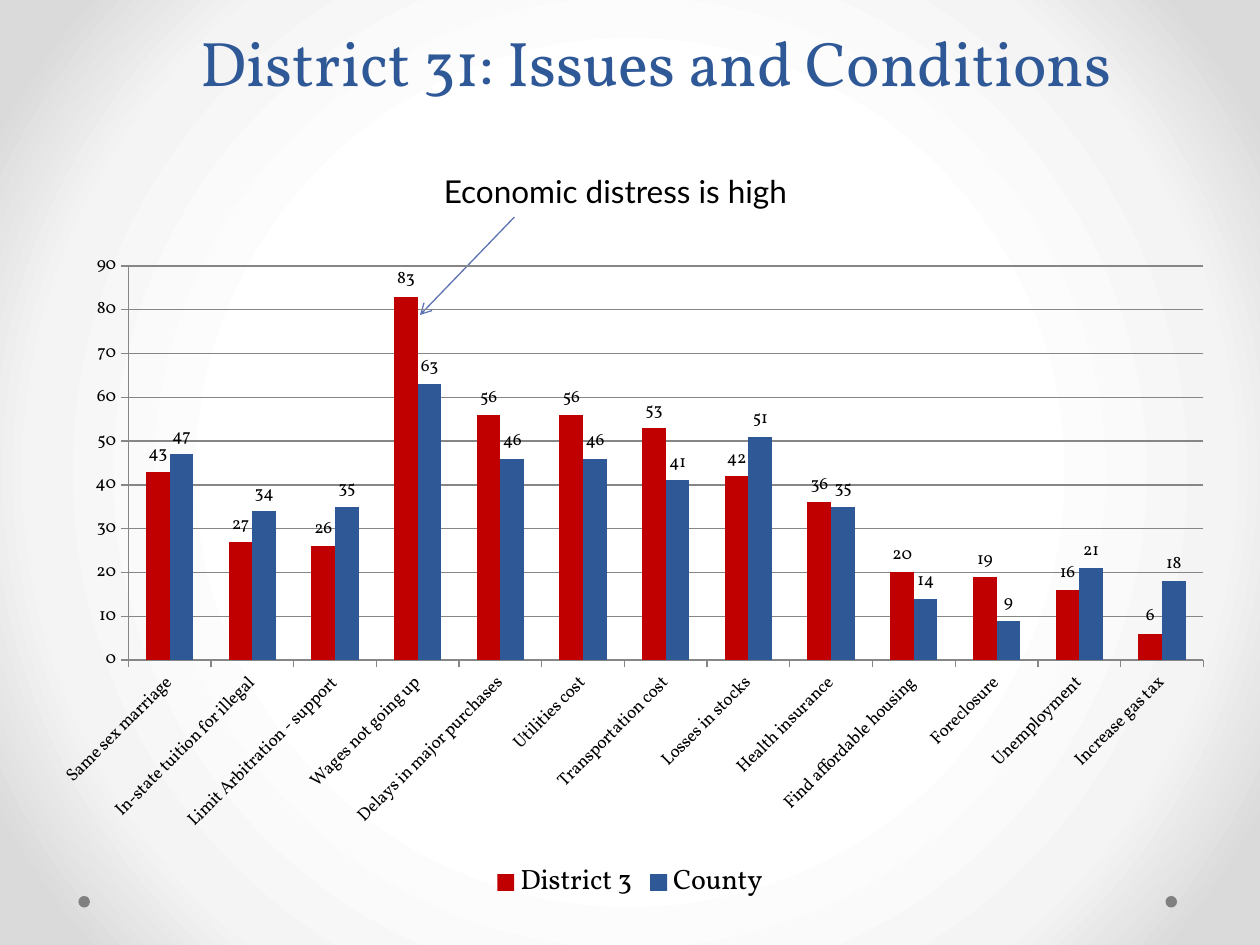
from lxml import etree
from pptx import Presentation
from pptx.chart.data import CategoryChartData as Data
from pptx.dml.color import RGBColor as Rgb
from pptx.enum.chart import XL_CHART_TYPE as Kind, XL_LABEL_POSITION as Spot
from pptx.enum.chart import XL_LEGEND_POSITION as Side, XL_TICK_MARK as Tick
from pptx.enum.shapes import MSO_CONNECTOR as Link, MSO_SHAPE as Form
from pptx.enum.text import MSO_ANCHOR as Anchor, PP_ALIGN as Align
from pptx.oxml import parse_xml
from pptx.oxml.ns import nsdecls, qn
from pptx.util import Pt

HUES = {"blue": "2F5897", "red": "C00000", "arrow": "5C72B2", "text": "000000",
        "grid": "868686", "dot": "808080"}
GLOW = [(50, "FFFFFF"), (76, "F4F4F4"), (92, "DADADA")]
ISSUES = [
    ("Same sex marriage", 43, 47),
    ("In-state tuition for illegal", 27, 34),
    ("Limit Arbitration - support", 26, 35),
    ("Wages not going up", 83, 63),
    ("Delays in major purchases", 56, 46),
    ("Utilities cost", 56, 46),
    ("Transportation cost", 53, 41),
    ("Losses in stocks", 42, 51),
    ("Health insurance", 36, 35),
    ("Find affordable housing", 20, 14),
    ("Foreclosure", 19, 9),
    ("Unemployment", 16, 21),
    ("Increase gas tax", 6, 18),
]


def hue(name):
    return Rgb.from_string(HUES[name])


def style(font, face, size, color):
    font.name, font.size = face, Pt(size)
    font.color.rgb = hue(color)


def add_glow(slide):
    stops = "".join(f'<a:gs pos="{pos * 1000}"><a:srgbClr val="{tint}"/></a:gs>'
                    for pos, tint in GLOW)
    back = parse_xml(
        f'<p:bg {nsdecls("p", "a")}><p:bgPr><a:gradFill><a:gsLst>{stops}</a:gsLst>'
        '<a:path path="circle"><a:fillToRect l="50000" t="50000" r="50000" b="50000"/>'
        '</a:path></a:gradFill><a:effectLst/></p:bgPr></p:bg>')
    slide.element.find(qn("p:cSld")).insert(0, back)


def add_dots(slide, lefts, top, size):
    for left in lefts:
        dot = slide.shapes.add_shape(Form.OVAL, Pt(left), Pt(top), Pt(size), Pt(size))
        dot.shadow.inherit = False
        dot.fill.solid()
        dot.fill.fore_color.rgb = hue("dot")
        dot.line.fill.background()


def add_text(slide, box, text, face, size, color):
    frame = slide.shapes.add_textbox(*map(Pt, box)).text_frame
    frame.word_wrap = True
    frame.text = text
    style(frame.paragraphs[0].runs[0].font, face, size, color)
    return frame


def add_title(slide, box):
    frame = add_text(slide, box, "District 31: Issues and Conditions", "Vollkorn", 36, "blue")
    frame.vertical_anchor = Anchor.BOTTOM
    para = frame.paragraphs[0]
    para.alignment, para.line_spacing = Align.CENTER, Pt(58)


def add_callout(slide, box):
    left, top, width, height = box
    add_text(slide, box, "Economic distress is high", "Lato", 18, "text")
    # Arrow from the note down to the tallest bar
    start, base = left + 47.5, top + height
    arrow = slide.shapes.add_connector(
        Link.STRAIGHT, Pt(start), Pt(base), Pt(start - 54), Pt(base + 56))
    arrow.line.color.rgb, arrow.line.width = hue("arrow"), Pt(0.75)
    etree.SubElement(arrow.line._get_or_add_ln(), qn("a:tailEnd"), type="arrow")
    etree.SubElement(arrow.element.spPr, qn("a:effectLst"))


def set_plot(chart, **parts):
    area = chart.plots[0]._element.getparent()
    for old in area.findall(qn("c:layout")):
        area.remove(old)
    sizes = "".join(f'<c:{key} val="{val}"/>' for key, val in parts.items())
    area.insert(0, parse_xml(
        f'<c:layout {nsdecls("c")}><c:manualLayout><c:layoutTarget val="inner"/>'
        f'<c:xMode val="edge"/><c:yMode val="edge"/>{sizes}'
        '</c:manualLayout></c:layout>'))


def add_bars(slide, box):
    names, *groups = zip(*ISSUES)
    data = Data()
    data.categories = names
    for name, vals in zip(("District 3", "County"), groups):
        data.add_series(name, vals)
    chart = slide.shapes.add_chart(Kind.COLUMN_CLUSTERED, *map(Pt, box), data).chart
    chart.has_title = False
    style(chart.font, "Vollkorn", 10, "text")
    set_plot(chart, x=0.08, y=0.04, w=0.9, h=0.59)

    # Bars and their values
    plot = chart.plots[0]
    plot.gap_width, plot.overlap, plot.vary_by_categories = 150, 0, False
    for group, color in zip(plot.series, ("red", "blue")):
        group.format.fill.solid()
        group.format.fill.fore_color.rgb = hue(color)
        group.data_labels.show_value = True
        group.data_labels.position = Spot.OUTSIDE_END

    # Axes
    cats, scale = chart.category_axis, chart.value_axis
    scale.minimum_scale, scale.maximum_scale, scale.major_unit = 0, 90, 10
    scale.has_major_gridlines = True
    for axis in (cats, scale):
        axis.major_tick_mark, axis.minor_tick_mark = Tick.OUTSIDE, Tick.NONE
        style(axis.tick_labels.font, "Vollkorn", 10, "text")
    for part in (cats, scale, scale.major_gridlines):
        part.format.line.color.rgb = hue("grid")
        part.format.line.width = Pt(0.75)
    cats._element.find(f'{qn("c:txPr")}/{qn("a:bodyPr")}').set("rot", "-2700000")

    # Legend
    chart.has_legend = True
    chart.legend.position, chart.legend.include_in_layout = Side.BOTTOM, False
    style(chart.legend.font, "Vollkorn", 16, "text")


def main():
    deck = Presentation()
    deck.slide_width, deck.slide_height = Pt(720), Pt(540)
    slide = deck.slides.add_slide(deck.slide_layouts[6])
    add_glow(slide)
    add_dots(slide, (666, 44.8), 512, 6.6)
    add_title(slide, (36, 0, 678, 60))
    add_callout(slide, (246.5, 95, 240, 29))
    add_bars(slide, (18.7, 136.8, 682.6, 381.6))
    deck.save("out.pptx")


if __name__ == "__main__":
    main()
